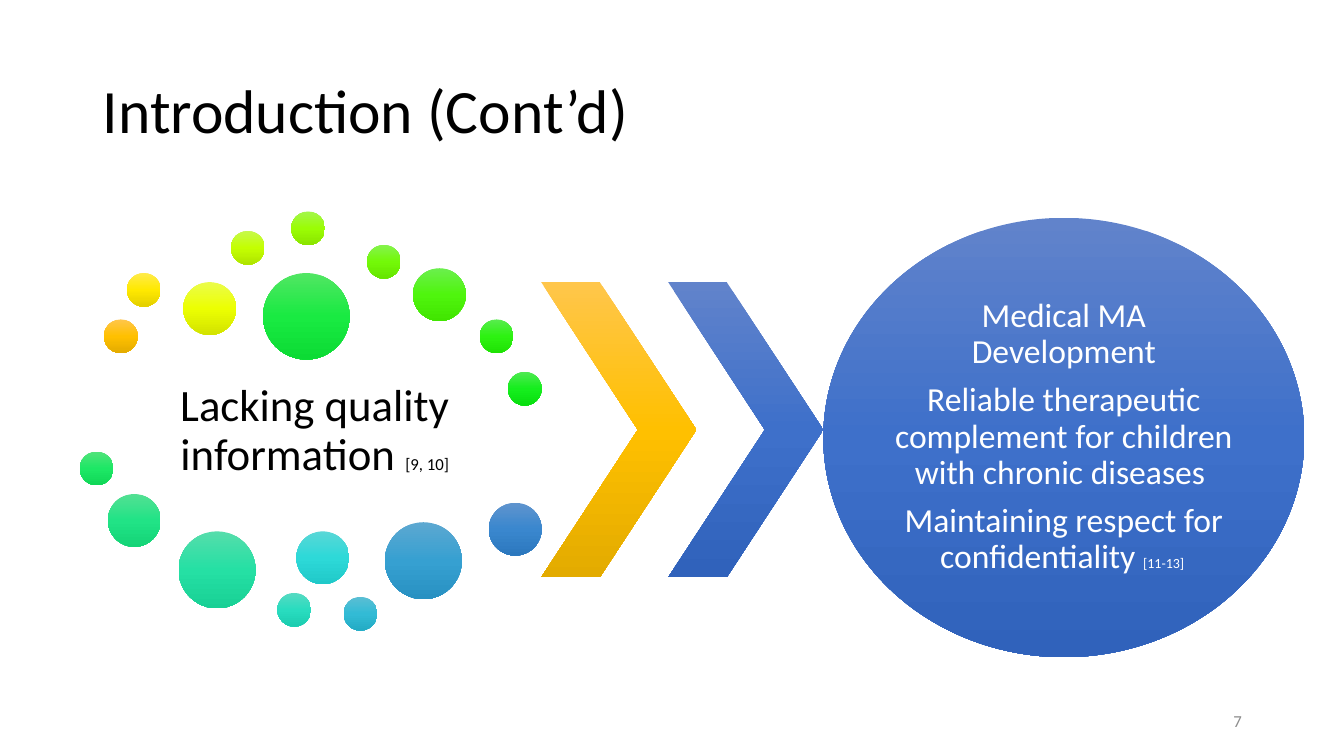
from copy import deepcopy
from dataclasses import dataclass

from pptx import Presentation
from pptx import util as u
from pptx.dml import color
from pptx.enum import shapes, text

FONT = "Calibri"
SMALL, MEDIUM, LARGE, LARGEST = 0.85, 1.33, 1.94, 2.18
AMBER = ("FFC64B", "FFC000", "E3AB00")
BLUE = ("6183CB", "3E70CA", "3062BB")


@dataclass
class Figure:
    left: float
    top: float
    width: float
    height: float
    colours: tuple[str, str, str]
    kind: shapes.MSO_SHAPE = shapes.MSO_SHAPE.OVAL


@dataclass
class Span:
    words: str
    size: float


@dataclass
class Label:
    left: float
    top: float
    width: float
    height: float
    paragraphs: list[list[Span]]
    colour: str = "000000"
    align: text.PP_ALIGN = text.PP_ALIGN.CENTER
    inset: tuple[float, float] = (0.25, 0.13)
    line_spacing: float = 0.9
    space_after: float = 0


def dot(left: float, top: float, size: float, *colours: str) -> Figure:
    return Figure(left, top, size, size, colours)


DOTS = [
    dot(2.62, 8.05, SMALL, *AMBER),
    dot(3.2, 6.88, SMALL, "FFEB4B", "FFE900", "E3CF00"),
    dot(4.62, 7.11, MEDIUM, "EBFC4B", "ECFF01", "D3E300"),
    dot(5.82, 5.82, SMALL, "C6F94C", "C4FF01", "AFE400"),
    dot(7.34, 5.33, SMALL, "A3F64C", "9BFD04", "8AE400"),
    dot(9.25, 6.17, SMALL, "85F34D", "73F908", "66E500"),
    dot(10.41, 6.76, MEDIUM, "6BEF4D", "4FF50D", "41E500"),
    dot(12.09, 8.05, SMALL, "58EC4E", "2DF211", "1FE204"),
    dot(12.8, 9.37, SMALL, "4FE952", "15EE1D", "08DF0F"),
    dot(6.63, 6.88, LARGEST, "51E663", "19EA42", "0CDB34"),
    dot(2.01, 11.38, SMALL, "52E37B", "1DE765", "10D757"),
    dot(2.72, 12.45, MEDIUM, "53E093", "21E386", "14D477"),
    dot(4.5, 13.39, LARGE, "55DDAB", "25E0A4", "18D095"),
    dot(6.99, 14.94, SMALL, "57DAC2", "29DCBF", "1CCDB0"),
    dot(7.47, 13.39, MEDIUM, "59D7D7", "2DD9D8", "20C9C9"),
    dot(8.66, 15.04, SMALL, "5BBED4", "32BBD5", "24ACC5"),
    dot(9.7, 13.16, LARGE, "5DA8D1", "36A0D1", "2891C2"),
    dot(12.32, 12.67, MEDIUM, "5F94CE", "3A87CE", "2C78BE"),
]

CHEVRONS = [
    Figure(left, 7.11, 3.91, 7.44, colours, shapes.MSO_SHAPE.CHEVRON)
    for left, colours in ((13.64, AMBER), (16.84, BLUE))
]

OUTCOME = Figure(20.75, 5.49, 12.12, 11.07, BLUE)

LABELS = [
    Label(2.34, 1.02, 29.21, 3.68, [[Span("Introduction (Cont’d)", 44)]],
          align=text.PP_ALIGN.LEFT),
    Label(3.3, 9.12, 9.27, 3.51,
          [[Span("Lacking quality information ", 32), Span("[9, 10]", 12)]],
          inset=(0.1, 0.1)),
    Label(22.53, 7.09, 8.56, 7.85,
          [[Span("Medical MA Development", 24)],
           [Span("Reliable therapeutic complement for children with chronic diseases ", 24)],
           [Span("Maintaining respect for confidentiality ", 24), Span("[11-13] ", 10)]],
          colour="FFFFFF", inset=(0, 0), space_after=8.4),
    Label(23.93, 17.65, 7.62, 1.02, [[Span("7", 12)]],
          colour="8C8C8C", align=text.PP_ALIGN.RIGHT, line_spacing=1),
]


def paint(target: color.ColorFormat, value: str) -> None:
    target.rgb = color.RGBColor.from_string(value)


def draw_figure(page, figure: Figure) -> None:
    shape = page.shapes.add_shape(
        figure.kind, u.Cm(figure.left), u.Cm(figure.top),
        u.Cm(figure.width), u.Cm(figure.height))
    if figure.kind == shapes.MSO_SHAPE.CHEVRON:
        shape.adjustments[0] = 0.623
    shape.shadow.inherit = False
    shape.line.fill.background()
    shape.fill.gradient()
    shape.fill.gradient_angle = 270
    stop_list = shape.element.xpath(".//a:gsLst")[0]
    stop_list.append(deepcopy(stop_list[-1]))
    for stop, position, value in zip(
            shape.fill.gradient_stops, (0, 0.5, 1), figure.colours):
        stop.position = position
        paint(stop.color, value)


def draw_label(page, label: Label) -> None:
    box = page.shapes.add_textbox(
        u.Cm(label.left), u.Cm(label.top), u.Cm(label.width), u.Cm(label.height))
    frame = box.text_frame
    frame.word_wrap = True
    frame.vertical_anchor = text.MSO_ANCHOR.MIDDLE
    frame.margin_left = frame.margin_right = u.Cm(label.inset[0])
    frame.margin_top = frame.margin_bottom = u.Cm(label.inset[1])
    for index, spans in enumerate(label.paragraphs):
        para = frame.add_paragraph() if index else frame.paragraphs[0]
        para.alignment = label.align
        para.line_spacing = label.line_spacing
        para.space_after = u.Pt(label.space_after)
        for span in spans:
            run = para.add_run()
            run.text = span.words
            run.font.name = FONT
            run.font.size = u.Pt(span.size)
            paint(run.font.color, label.colour)


def main() -> None:
    deck = Presentation()
    deck.slide_width, deck.slide_height = u.Cm(33.87), u.Cm(19.05)
    page = deck.slides.add_slide(deck.slide_layouts[6])
    for figure in [*DOTS, *CHEVRONS, OUTCOME]:
        draw_figure(page, figure)
    for label in LABELS:
        draw_label(page, label)
    deck.save("out.pptx")


if __name__ == "__main__":
    main()
